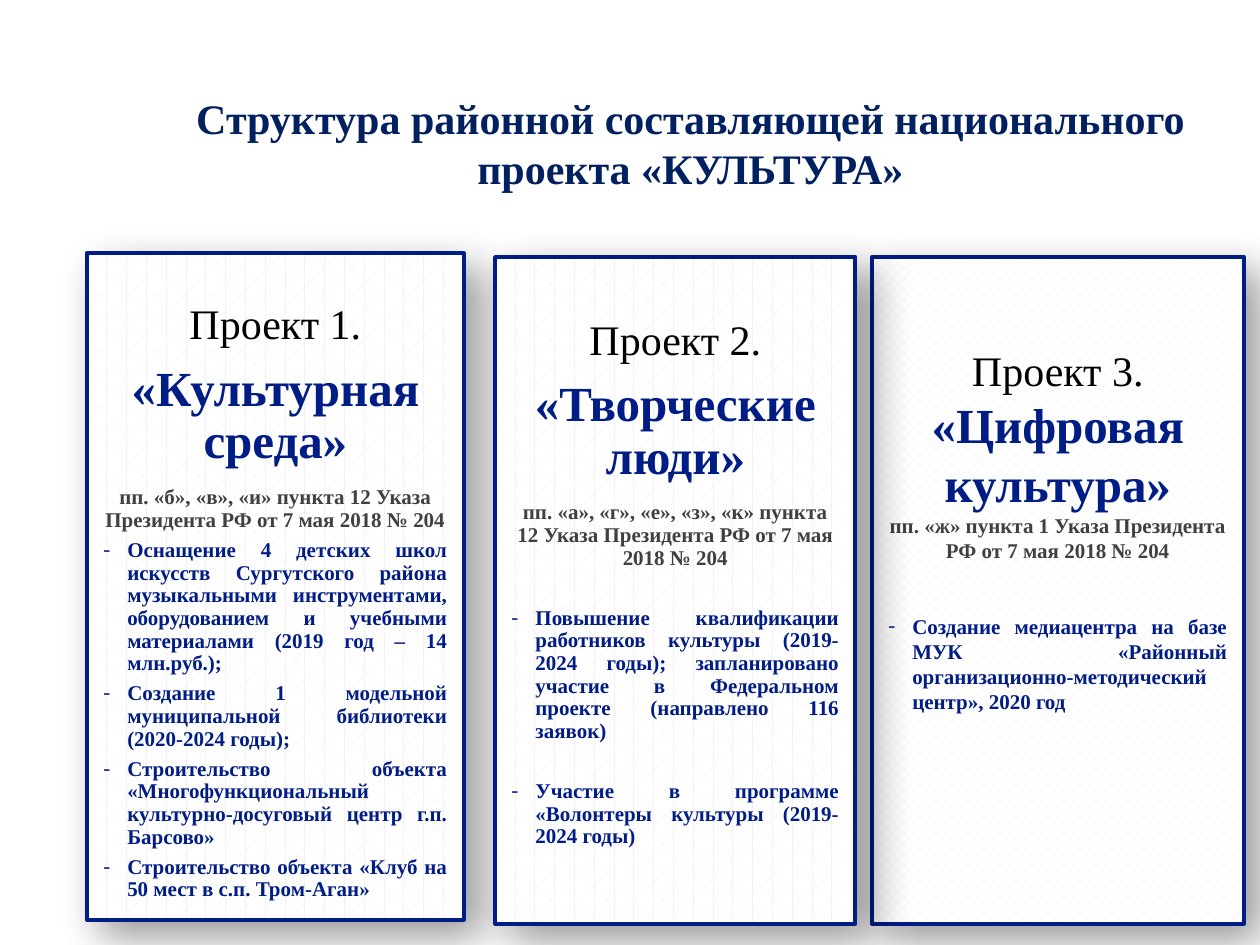
from lxml import etree
from pptx import Presentation
from pptx.dml.color import RGBColor
from pptx.enum.dml import MSO_PATTERN
from pptx.enum.shapes import MSO_SHAPE
from pptx.enum.text import MSO_ANCHOR, PP_ALIGN
from pptx.oxml import parse_xml
from pptx.oxml.ns import nsdecls, qn
from pptx.util import Inches, Pt

DIVOT, WEAVE = MSO_PATTERN.DIVOT, MSO_PATTERN.WEAVE
RECT = MSO_SHAPE.RECTANGLE
TOP, MIDDLE = MSO_ANCHOR.TOP, MSO_ANCHOR.MIDDLE
CENTER, JUSTIFY = PP_ALIGN.CENTER, PP_ALIGN.JUSTIFY

NAVY = RGBColor(0x00, 0x20, 0x60)
BLUE = RGBColor(0x00, 0x1C, 0x85)
GRAY = RGBColor(0x40, 0x40, 0x40)
PALE = RGBColor(0xF2, 0xF2, 0xF2)
BLACK = RGBColor(0, 0, 0)
WHITE = RGBColor(0xFF, 0xFF, 0xFF)
FONT = "Times New Roman"
PAD = Inches(0.13)
HANG = Inches(0.19)

TITLE = "Структура районной составляющей национального проекта «КУЛЬТУРА»"
CARDS = [
    dict(box=(0.69, 2.01, 2.99, 5.29), top=0.4, fill=DIVOT, line=0.9, gap=0.35, rest=(4.2, 4.2),
         heads=["Проект 1.", "«Культурная среда»",
                "пп. «б», «в», «и» пункта 12 Указа Президента РФ от 7 мая 2018 № 204"],
         items=["Оснащение 4 детских школ искусств Сургутского района музыкальными "
                "инструментами, оборудованием и учебными материалами (2019 год – 14 млн.руб.);",
                "Создание 1 модельной муниципальной библиотеки (2020-2024 годы);",
                "Строительство объекта «Многофункциональный культурно-досуговый центр г.п. Барсово»",
                "Строительство объекта «Клуб на 50 мест в с.п. Тром-Аган»"]),
    dict(box=(6.92, 2.04, 2.95, 5.29), top=0.69, fill=WEAVE, line=1.0, gap=0, rest=(29, 0),
         heads=["Проект 3.", "«Цифровая культура»",
                "пп. «ж» пункта 1 Указа Президента РФ от 7 мая 2018 № 204"],
         items=["Создание медиацентра на базе МУК «Районный организационно-методический "
                "центр», 2020 год"]),
    dict(box=(3.93, 2.04, 2.86, 5.29), top=0.49, fill=DIVOT, line=0.9, gap=0.35, rest=(21.3, 21.3),
         heads=["Проект 2.", "«Творческие люди»",
                "пп. «а», «г», «е», «з», «к» пункта 12 Указа Президента РФ от 7 мая 2018 № 204"],
         items=["Повышение квалификации работников культуры (2019-2024 годы); запланировано "
                "участие в Федеральном проекте (направлено 116 заявок)",
                "Участие в программе «Волонтеры культуры (2019-2024 годы)"]),
]


def style(para, text, size, color, bold=True, align=CENTER):
    """Set the text of a paragraph and format its runs."""
    para.text = text
    para.alignment = align
    for run in para.runs:
        font = run.font
        font.name, font.size, font.bold = FONT, Pt(size), bold
        font.color.rgb = color


def dash(para):
    """Give a paragraph a hanging dash bullet."""
    props = para._p.get_or_add_pPr()
    props.set("marL", str(HANG))
    props.set("indent", str(-HANG))
    etree.SubElement(props, qn("a:buFont"), typeface=FONT)
    etree.SubElement(props, qn("a:buChar"), char="-")


def shade(shape):
    """Give a shape a soft outer shadow."""
    shape.shadow.inherit = False
    shape._element.spPr.find(qn("a:effectLst")).append(parse_xml(
        f'<a:outerShdw {nsdecls("a")} blurRad="{Pt(24)}" dist="{Pt(12)}" '
        'dir="2700000" algn="ctr" rotWithShape="0">'
        '<a:srgbClr val="000000"><a:alpha val="40000"/></a:srgbClr></a:outerShdw>'))


def add_title(slide, box):
    """Place the slide title in the given box."""
    frame = slide.shapes.add_textbox(*map(Inches, box)).text_frame
    frame.word_wrap = True
    frame.vertical_anchor = MIDDLE
    style(frame.paragraphs[0], TITLE, 24, NAVY)


def add_card(slide, box, top, fill, line, gap, rest, heads, items):
    """Place one project card with its headings and bullets in the given box."""
    card = slide.shapes.add_shape(RECT, *map(Inches, box))
    card.fill.patterned()
    card.fill.pattern = fill
    card.fill.fore_color.rgb = PALE
    card.fill.back_color.rgb = WHITE
    card.line.color.rgb = BLUE
    card.line.width = Pt(2.25)
    shade(card)

    frame = card.text_frame
    frame.word_wrap = True
    frame.vertical_anchor = TOP
    frame.margin_left = frame.margin_right = frame.margin_bottom = PAD
    frame.margin_top = Inches(top)

    name, theme, basis = heads
    after, between = rest
    rows = [(name, 24, BLACK, False, CENTER, 24 * gap),
            (theme, 28, BLUE, True, CENTER, 28 * gap),
            (basis, 12, GRAY, True, CENTER, after)]
    rows += [(item, 12, BLUE, True, JUSTIFY, between) for item in items]
    for i, (*look, space) in enumerate(rows):
        para = frame.add_paragraph() if i else frame.paragraphs[0]
        if i >= len(heads):
            dash(para)
        style(para, *look)
        para.line_spacing = line
        para.space_after = Pt(space)


def main():
    """Build the slide and save it."""
    deck = Presentation()
    deck.slide_width, deck.slide_height = Inches(10), Inches(7.5)
    slide = deck.slides.add_slide(deck.slide_layouts[6])
    add_title(slide, (1.41, 0.7, 8.14, 0.87))
    for card in CARDS:
        add_card(slide, **card)
    deck.save("out.pptx")


if __name__ == "__main__":
    main()
